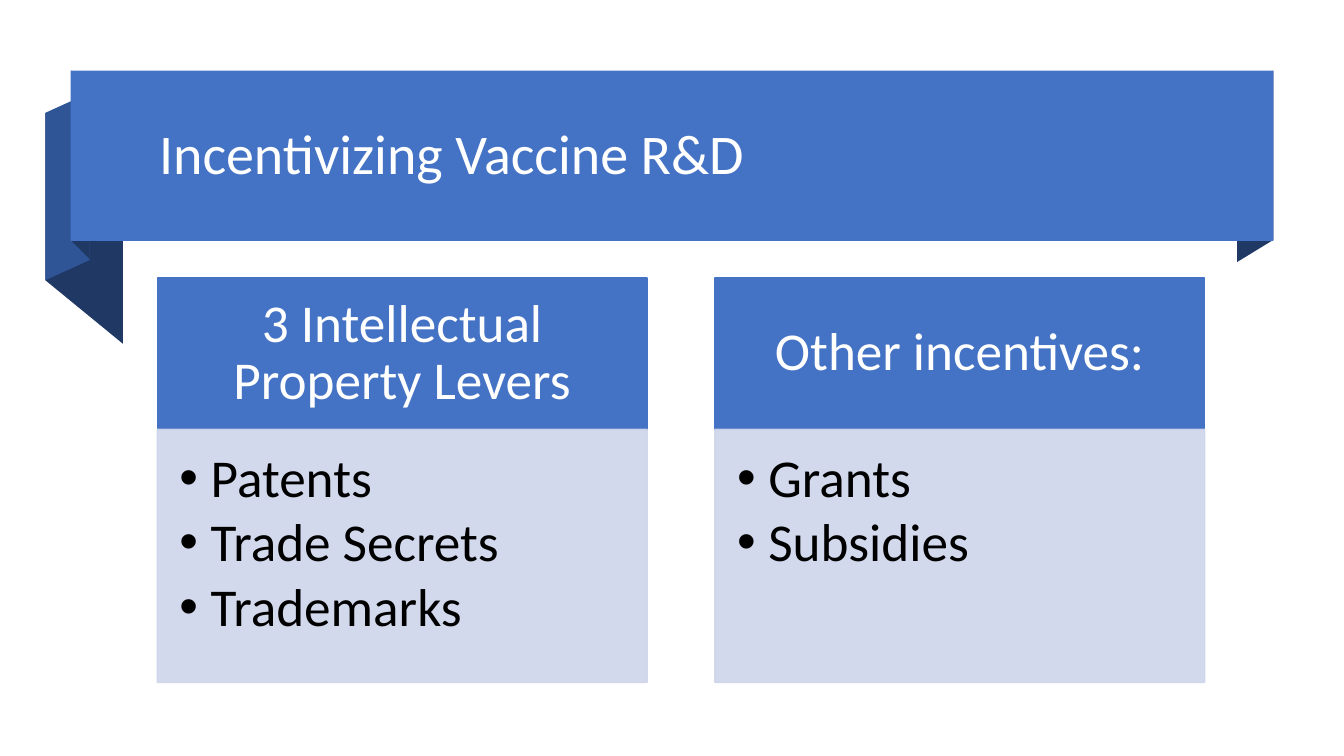
from pptx import Presentation
from pptx.dml.color import RGBColor as Rgb
from pptx.enum.shapes import MSO_SHAPE as Kind
from pptx.enum.text import MSO_ANCHOR as Anchor, PP_ALIGN as Align
from pptx.util import Pt
from lxml.etree import SubElement as Sub
from pptx.oxml.ns import qn

PX = 9144
BLUE, MID, NAVY, PALE = "4472C4", "2F5597", "203864", "CFD5EA"


def paint(shape, tone, edge=False, alpha=100):
    shape.shadow.inherit = False
    shape.fill.solid()
    shape.fill.fore_color.rgb = Rgb.from_string(tone)
    if edge:
        shape.line.width = Pt(1)
        shape.line.color.rgb = Rgb.from_string(tone)
    else:
        shape.line.fill.background()
    if alpha < 100:
        for color in shape.element.spPr.iter(qn("a:srgbClr")):
            Sub(color, qn("a:alpha"), val=str(alpha * 1000))


def write(shape, lines, tone, size, anchor, align, pad, after=0, bullet=False):
    frame = shape.text_frame
    sides = ("margin_left", "margin_top", "margin_right", "margin_bottom")
    form = {"word_wrap": True, "vertical_anchor": anchor}
    form.update((side, gap * PX) for side, gap in zip(sides, pad))
    for key, value in form.items():
        setattr(frame, key, value)
    frame.text = "\n".join(lines)
    look = {"alignment": align, "line_spacing": 0.9, "space_after": Pt(after)}
    for para in frame.paragraphs:
        for key, value in look.items():
            setattr(para, key, value)
        for key, value in {"name": "Calibri", "size": Pt(size)}.items():
            setattr(para.runs[0].font, key, value)
        para.runs[0].font.color.rgb = Rgb.from_string(tone)
        if bullet:
            para.level = 1
            prop = para._p.get_or_add_pPr()
            prop.set("marL", str(31 * PX))
            prop.set("indent", str(-31 * PX))
            Sub(prop, qn("a:buFont"), typeface="Arial")
            Sub(prop, qn("a:buChar"), char="•")


deck = Presentation()
deck.slide_width, deck.slide_height = 1333 * PX, 750 * PX
slide = deck.slides.add_slide(deck.slide_layouts[6])
shapes = slide.shapes

folds = [
    (NAVY, [(1263, 238), (1227, 260), (1227, 91), (1263, 70)]),
    (NAVY, [(122, 341), (45, 278), (45, 112), (122, 175)]),
    (MID, [(89, 258), (45, 278), (45, 112), (89, 92)]),
    (NAVY, [(89, 257), (71, 239), (71, 70), (89, 89)]),
]
for tone, points in folds:
    pen = shapes.build_freeform(*points[0], scale=PX)
    pen.add_line_segments(points[1:], close=True)
    paint(pen.convert_to_shape(), tone)

banner = shapes.add_shape(Kind.RECTANGLE, 70 * PX, 70 * PX, 1193 * PX, 169 * PX)
paint(banner, BLUE)
title = shapes.add_textbox(148 * PX, 83 * PX, 1094 * PX, 145 * PX)
write(title, ["Incentivizing Vaccine R&D"], "FFFFFF", 40,
      Anchor.MIDDLE, Align.LEFT, (10, 5, 10, 5))

groups = [
    ("3 Intellectual Property Levers", ["Patents", "Trade Secrets", "Trademarks"]),
    ("Other incentives:", ["Grants", "Subsidies"]),
]
for col, (name, items) in enumerate(groups):
    left = (156 + 553 * col) * PX
    head = shapes.add_shape(Kind.RECTANGLE, left, 276 * PX, 486 * PX, 150 * PX)
    paint(head, BLUE, edge=True)
    write(head, [name], "FFFFFF", 38, Anchor.MIDDLE, Align.CENTER, (30, 17, 30, 17))
    body = shapes.add_shape(Kind.RECTANGLE, left, 426 * PX, 486 * PX, 251 * PX)
    paint(body, PALE, edge=True, alpha=90)
    write(body, items, "000000", 38, Anchor.TOP, Align.LEFT,
          (22, 22, 30, 33), after=5, bullet=True)

deck.save("out.pptx")
